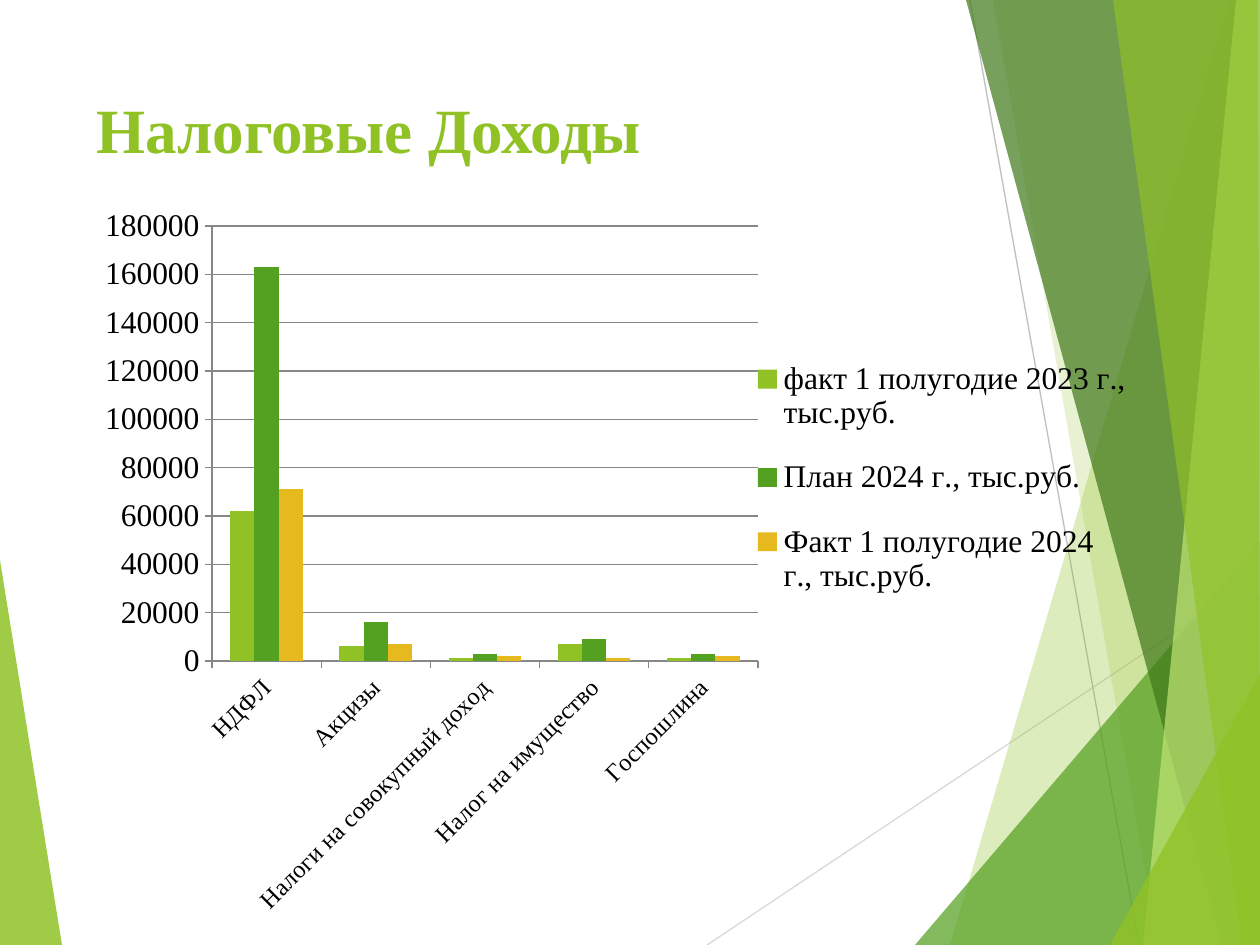
from dataclasses import dataclass

from lxml.etree import SubElement
from pptx import Presentation
from pptx.chart.data import CategoryChartData
from pptx.dml.color import RGBColor
from pptx.enum.chart import XL_CHART_TYPE as ChartType
from pptx.enum.chart import XL_LEGEND_POSITION as LegendPosition
from pptx.enum.chart import XL_TICK_MARK as TickMark
from pptx.enum.shapes import MSO_CONNECTOR as Connector
from pptx.enum.text import MSO_ANCHOR as Anchor
from pptx.enum.text import PP_ALIGN as Align
from pptx.oxml import parse_xml
from pptx.oxml.ns import nsdecls, qn
from pptx.oxml.xmlchemy import BaseOxmlElement
from pptx.slide import Slide
from pptx.util import Emu, Pt

PX = 914400 / 126
WIDTH, HEIGHT = 1260, 945


@dataclass(frozen=True)
class Theme:
    font: str = "Times New Roman"
    lime: str = "90C226"
    green: str = "54A021"
    gold: str = "E6B91E"
    dark_green: str = "3F7819"
    pale_lime: str = "C0E474"
    text: str = "000000"
    axis: str = "878787"
    title_size: int = 36
    chart_size: int = 18
    category_size: int = 14


@dataclass(frozen=True)
class Box:
    left: int
    top: int
    width: int
    height: int


@dataclass(frozen=True)
class Facet:
    points: tuple[tuple[int, int], ...]
    color: str
    opacity: int


@dataclass(frozen=True)
class Ray:
    start: tuple[int, int]
    end: tuple[int, int]
    color: str


@dataclass(frozen=True)
class Series:
    name: str
    values: tuple[int, ...]
    color: str


THEME = Theme()
TITLE_BOX = Box(84, 84, 875, 181)
CHART_BOX = Box(84, 195, 1062, 735)
PLOT_BOX = Box(212, 226, 546, 435)
LEGEND_BOX = Box(774, 332, 372, 291)

LEFT_FACET = Facet(((0, 560), (62, HEIGHT), (0, HEIGHT)), THEME.lime, 85)
RAYS = (
    Ray((707, HEIGHT), (WIDTH, 576), "D9D9D9"),
    Ray((970, 0), (1139, HEIGHT), "BFBFBF"),
)
RIGHT_FACETS = (
    Facet(((1229, 0), (950, HEIGHT), (WIDTH, HEIGHT), (WIDTH, 0)), THEME.lime, 30),
    Facet(((993, 0), (1158, HEIGHT), (WIDTH, HEIGHT), (WIDTH, 0)), THEME.lime, 20),
    Facet(((915, HEIGHT), (WIDTH, 541), (WIDTH, HEIGHT)), THEME.green, 72),
    Facet(((966, 0), (1222, HEIGHT), (WIDTH, HEIGHT), (WIDTH, 0)), THEME.dark_green, 70),
    Facet(((1236, 0), (1143, HEIGHT), (WIDTH, HEIGHT), (WIDTH, 0)), THEME.pale_lime, 70),
    Facet(((1113, 0), (1242, HEIGHT), (WIDTH, HEIGHT), (1258, 0)), THEME.lime, 65),
    Facet(((1110, HEIGHT), (WIDTH, 674), (WIDTH, HEIGHT)), THEME.lime, 80),
)

CATEGORIES = ("НДФЛ", "Акцизы", "Налоги на совокупный доход",
              "Налог на имущество", "Госпошлина")
SERIES = (
    Series("факт 1 полугодие 2023 г., тыс.руб.", (62000, 6000, 1000, 7000, 1000), THEME.lime),
    Series("План 2024 г., тыс.руб.", (163000, 16000, 3000, 9000, 3000), THEME.green),
    Series("Факт 1 полугодие 2024 г., тыс.руб.", (71000, 7000, 2000, 1000, 2000), THEME.gold),
)


def px(length: int) -> Emu:
    return Emu(round(length * PX))


def rgb(color: str) -> RGBColor:
    return RGBColor.from_string(color)


def add_facet(slide: Slide, facet: Facet) -> None:
    builder = slide.shapes.build_freeform(*facet.points[0], scale=PX)
    builder.add_line_segments(facet.points[1:], close=True)
    shape = builder.convert_to_shape()
    shape.shadow.inherit = False
    shape.line.fill.background()
    shape.fill.solid()
    shape.fill.fore_color.rgb = rgb(facet.color)
    color = shape.element.spPr.find(f"{qn('a:solidFill')}/{qn('a:srgbClr')}")
    SubElement(color, qn("a:alpha"), val=str(facet.opacity * 1000))


def add_ray(slide: Slide, ray: Ray) -> None:
    points = [px(value) for value in ray.start + ray.end]
    connector = slide.shapes.add_connector(Connector.STRAIGHT, *points)
    connector.line.color.rgb = rgb(ray.color)
    connector.line.width = Pt(0.75)
    SubElement(connector.element.spPr, qn("a:effectLst"))


def set_title(slide: Slide, text: str) -> None:
    title = slide.shapes.title
    title.left, title.top = px(TITLE_BOX.left), px(TITLE_BOX.top)
    title.width, title.height = px(TITLE_BOX.width), px(TITLE_BOX.height)
    frame = title.text_frame
    frame.text = text
    frame.word_wrap = True
    frame.vertical_anchor = Anchor.TOP
    frame.margin_top = px(7)
    paragraph = frame.paragraphs[0]
    paragraph.alignment = Align.LEFT
    paragraph.font.name = THEME.font
    paragraph.font.size = Pt(THEME.title_size)
    paragraph.font.bold = True
    paragraph.font.color.rgb = rgb(THEME.lime)


def place_in_chart(part: BaseOxmlElement, box: Box, index: int, target: str = "") -> None:
    """Fix a chart part at a slide position, as fractions of the chart."""
    for layout in part.findall(qn("c:layout")):
        part.remove(layout)
    x = (box.left - CHART_BOX.left) / CHART_BOX.width
    y = (box.top - CHART_BOX.top) / CHART_BOX.height
    width, height = box.width / CHART_BOX.width, box.height / CHART_BOX.height
    part.insert(index, parse_xml(
        f'<c:layout {nsdecls("c")}><c:manualLayout>{target}'
        f'<c:xMode val="edge"/><c:yMode val="edge"/><c:x val="{x}"/><c:y val="{y}"/>'
        f'<c:w val="{width}"/><c:h val="{height}"/></c:manualLayout></c:layout>'))


def add_revenue_chart(slide: Slide) -> None:
    data = CategoryChartData()
    data.categories = CATEGORIES
    for series in SERIES:
        data.add_series(series.name, series.values)
    frame = slide.shapes.add_chart(
        ChartType.COLUMN_CLUSTERED, px(CHART_BOX.left), px(CHART_BOX.top),
        px(CHART_BOX.width), px(CHART_BOX.height), data)
    chart = frame.chart
    chart.has_title = False
    chart.font.name = THEME.font
    chart.font.size = Pt(THEME.chart_size)
    chart.font.color.rgb = rgb(THEME.text)

    # Columns
    plot = chart.plots[0]
    plot.gap_width = 150
    plot.overlap = 0
    plot.vary_by_categories = False
    for columns, series in zip(plot.series, SERIES):
        columns.format.fill.solid()
        columns.format.fill.fore_color.rgb = rgb(series.color)

    # Axes and gridlines
    value_axis, category_axis = chart.value_axis, chart.category_axis
    value_axis.minimum_scale, value_axis.maximum_scale = 0, 180000
    value_axis.major_unit = 20000
    value_axis.has_major_gridlines = True
    for axis in (value_axis, category_axis):
        axis.major_tick_mark = TickMark.OUTSIDE
    for line in (value_axis.format.line, category_axis.format.line,
                 value_axis.major_gridlines.format.line):
        line.color.rgb = rgb(THEME.axis)
        line.width = Pt(0.75)
    category_axis.tick_labels.font.size = Pt(THEME.category_size)
    category_axis._element.txPr.bodyPr.set("rot", "-2700000")

    # Legend and plot area
    chart.has_legend = True
    chart.legend.position = LegendPosition.RIGHT
    chart.legend.include_in_layout = False
    place_in_chart(chart.legend._element, LEGEND_BOX, 1)
    place_in_chart(chart._chartSpace.chart.plotArea, PLOT_BOX, 0,
                   '<c:layoutTarget val="inner"/>')


def main() -> None:
    presentation = Presentation()
    presentation.slide_width, presentation.slide_height = px(WIDTH), px(HEIGHT)
    slide = presentation.slides.add_slide(presentation.slide_layouts[5])

    # Faceted backdrop
    add_facet(slide, LEFT_FACET)
    for ray in RAYS:
        add_ray(slide, ray)
    for facet in RIGHT_FACETS:
        add_facet(slide, facet)

    # Content
    set_title(slide, "Налоговые Доходы")
    add_revenue_chart(slide)
    presentation.save("out.pptx")


if __name__ == "__main__":
    main()
